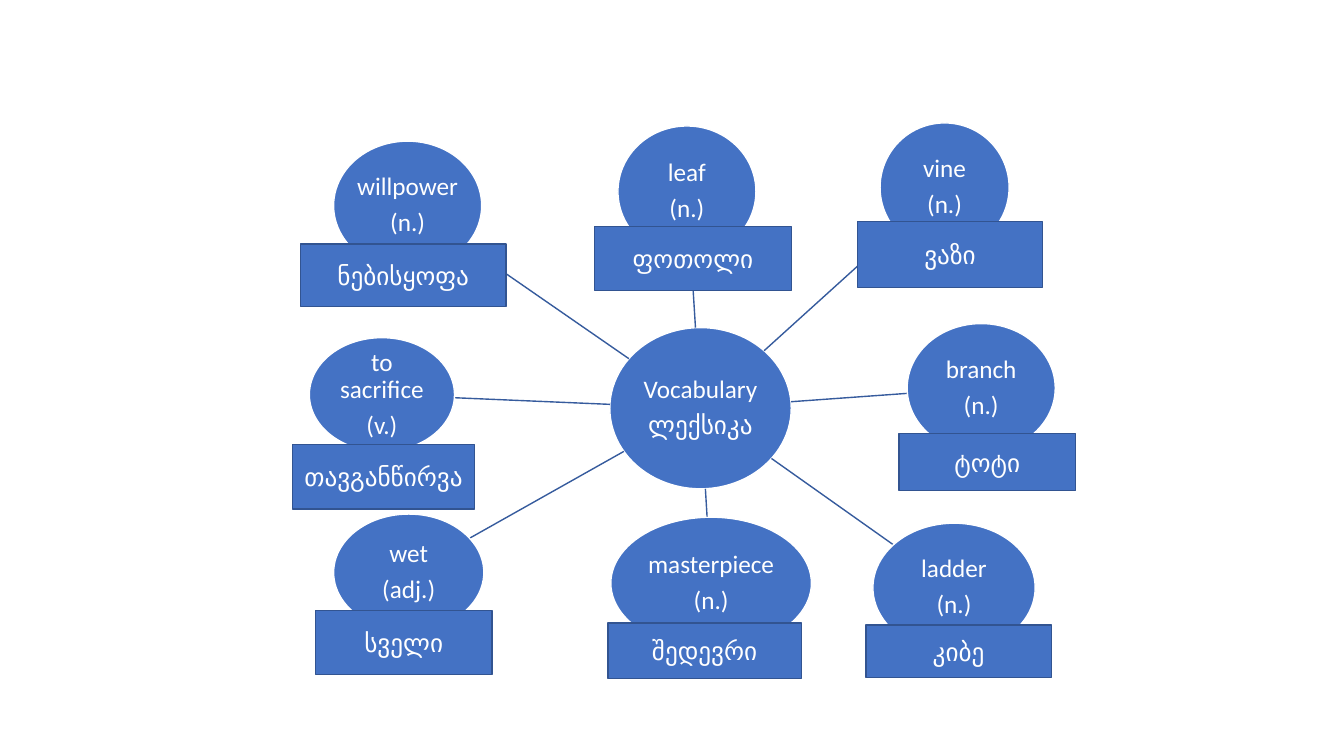
from math import hypot
from lxml import etree
from pptx import Presentation
from pptx.dml.color import RGBColor
from pptx.enum import shapes, text
from pptx.oxml import ns
from pptx.util import Pt

deck = Presentation()
deck.slide_width, deck.slide_height = Pt(960), Pt(540)
slide = deck.slides.add_slide(deck.slide_layouts[6])


def add_label(kind, box, lines, outline, inset=None):
    label = slide.shapes.add_shape(kind, *[Pt(side) for side in box])
    label.shadow.inherit = False
    label.fill.solid()
    label.fill.fore_color.rgb = RGBColor.from_string("4472C4")
    label.line.color.rgb = RGBColor.from_string(outline)
    label.line.width = Pt(1)
    frame = label.text_frame
    frame.word_wrap = True
    frame.vertical_anchor = text.MSO_ANCHOR.MIDDLE
    if inset:
        frame.margin_left = frame.margin_right = Pt(inset)
        frame.margin_top = frame.margin_bottom = Pt(inset)
    for number, line in enumerate(lines):
        paragraph = frame.paragraphs[0] if number == 0 else frame.add_paragraph()
        paragraph.alignment = text.PP_ALIGN.CENTER
        if len(lines) > 1:
            paragraph.line_spacing = 0.9
            paragraph.space_after = Pt(6.3)
        run = paragraph.add_run()
        run.text = line
        run.font.name = "Calibri"
        run.font.size = Pt(18)
        run.font.color.rgb = RGBColor.from_string("FFFFFF")


def rim_point(box, toward):
    left, top, width, height = box
    x, y = left + width / 2, top + height / 2
    dx = toward[0] + toward[2] / 2 - x
    dy = toward[1] + toward[3] / 2 - y
    reach = 1 / hypot(dx / (width / 2), dy / (height / 2))
    return Pt(x + dx * reach), Pt(y + dy * reach)


hub = (435.6, 234, 129.6, 115.2)
words = [
    ("leaf", "(n.)", (441.4, 90, 98.6, 93.6),
     "ფოთოლი", (424.8, 162, 140.4, 45.4)),
    ("branch", "(n.)", (648, 231.1, 105.8, 92.2),
     "ტოტი", (642.2, 309.6, 126, 41)),
    ("vine", "(n.)", (628.6, 87.8, 92.2, 92.2),
     "ვაზი", (612.7, 158.4, 131.8, 46.8)),
    ("ladder", "(n.)", (623.5, 373.7, 115.9, 92.2),
     "კიბე", (618.5, 446.4, 132.5, 37.4)),
    ("masterpiece", "(n.)", (436.3, 369.4, 143.3, 94.3),
     "შედევრი", (434.2, 445, 138.2, 39.6)),
    ("wet", "(adj.)", (238.3, 367.2, 107.3, 83.5),
     "სველი", (225.4, 436.3, 126, 45.4)),
    ("to sacrifice", "(v.)", (221, 241.2, 103.7, 81.4),
     "თავგანწირვა", (208.8, 317.5, 130.3, 46.1)),
    ("willpower", "(n.)", (238.3, 100.8, 105.8, 92.2),
     "ნებისყოფა", (214.6, 174.2, 146.9, 44.6)),
]

oval, rectangle = shapes.MSO_SHAPE.OVAL, shapes.MSO_SHAPE.RECTANGLE
add_label(oval, hub, ["Vocabulary", "ლექსიკა"], "FFFFFF", 0.9)
for english, part_of_speech, bubble, georgian, plate in words:
    spoke = slide.shapes.add_connector(
        shapes.MSO_CONNECTOR.STRAIGHT, *rim_point(hub, bubble), *rim_point(bubble, hub))
    spoke.line.color.rgb = RGBColor.from_string("365B9D")
    spoke.line.width = Pt(1)
    etree.SubElement(spoke._element.spPr, ns.qn("a:effectLst"))
    add_label(oval, bubble, [english, part_of_speech], "FFFFFF", 0.9)
    add_label(rectangle, plate, [georgian], "325491")

deck.save("out.pptx")
